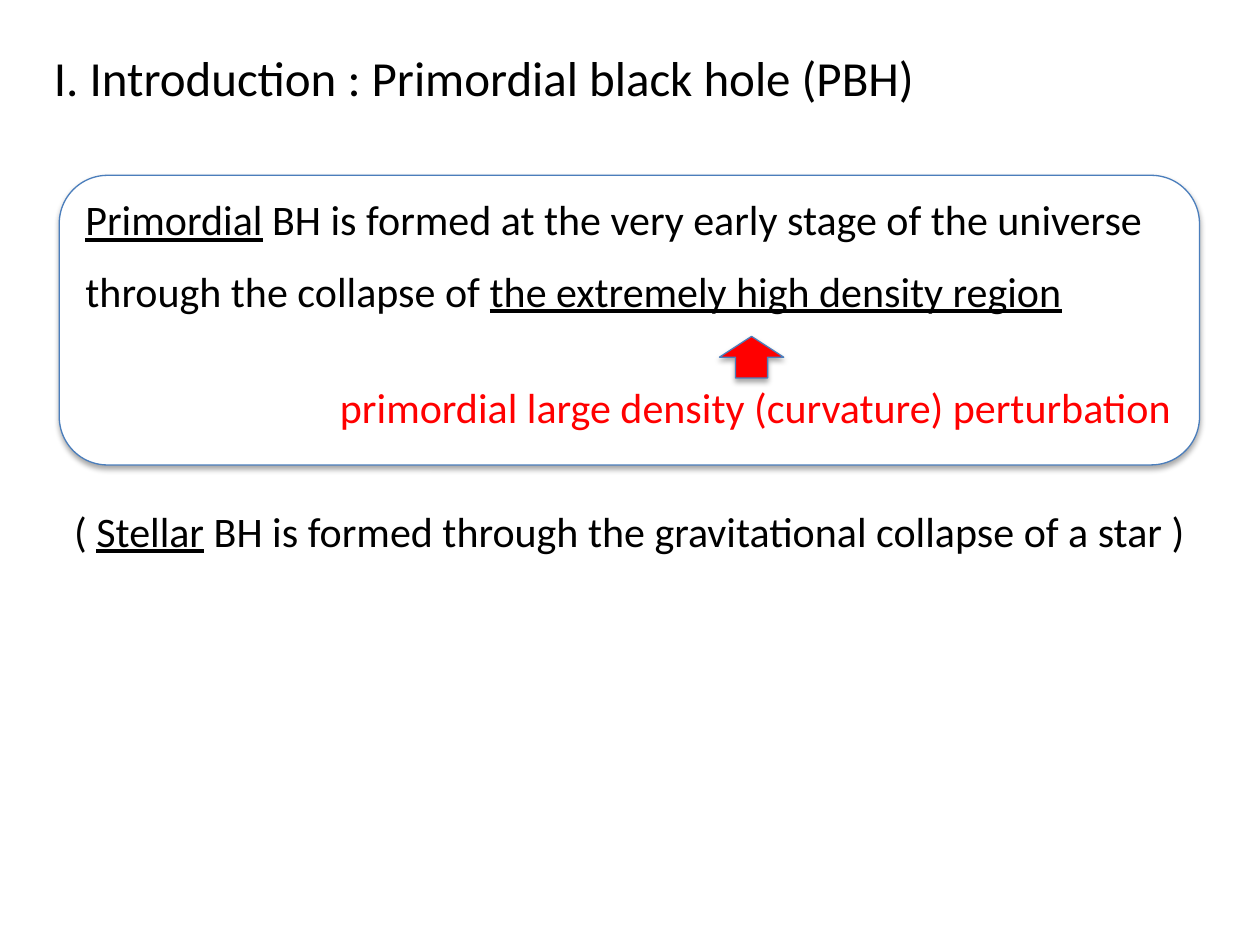
from lxml import etree
from pptx import Presentation
from pptx.dml.color import RGBColor
from pptx.enum.shapes import MSO_SHAPE
from pptx.enum.text import MSO_AUTO_SIZE
from pptx.oxml.ns import qn
from pptx.util import Inches, Pt

ROUND_BOX = MSO_SHAPE.ROUNDED_RECTANGLE
UP_ARROW = MSO_SHAPE.UP_ARROW
FIT_SHAPE = MSO_AUTO_SIZE.SHAPE_TO_FIT_TEXT

WIDTH, HEIGHT = Inches(10), Inches(7.5)
FONT = "Calibri"
BLACK, WHITE, RED, BLUE = "000000", "FFFFFF", "FF0000", "4B7EBC"


def color(value):
    return RGBColor.from_string(value)


def place(x, y, w, h):
    """Turn percentages of the slide into left, top, width and height."""
    return [int(share * size / 100)
            for share, size in zip((x, y, w, h), (WIDTH, HEIGHT) * 2)]


def add_shadow(sp):
    """Give the shape a soft black shadow falling straight down."""
    sp.shadow.inherit = False
    effects = sp._element.spPr.find(qn("a:effectLst"))
    shadow = etree.SubElement(effects, qn("a:outerShdw"), blurRad=str(Pt(3.1)),
                              dist=str(Pt(1.8)), dir="5400000", rotWithShape="0")
    black = etree.SubElement(shadow, qn("a:srgbClr"), val=BLACK)
    etree.SubElement(black, qn("a:alpha"), val="35000")


def add_outlined_shape(shapes, kind, area, fill):
    sp = shapes.add_shape(kind, *place(*area))
    sp.fill.solid()
    sp.fill.fore_color.rgb = color(fill)
    sp.line.color.rgb = color(BLUE)
    sp.line.width = Pt(0.75)
    add_shadow(sp)


def add_text(shapes, area, lines, size=24, ink=BLACK, gap=0):
    """Write lines, each a list of (text, underlined) runs."""
    tf = shapes.add_textbox(*place(*area)).text_frame
    tf.word_wrap = False
    tf.auto_size = FIT_SHAPE
    for i, runs in enumerate(lines):
        p = tf.add_paragraph() if i else tf.paragraphs[0]
        p.space_after = Pt(gap)
        p.font.name = FONT
        p.font.size = Pt(size)
        p.font.color.rgb = color(ink)
        for text, underlined in runs:
            r = p.add_run()
            r.text = text
            if underlined:
                r.font.underline = True


def add_definition(shapes):
    add_outlined_shape(shapes, ROUND_BOX, (4.7, 18.55, 90.5, 30.65), WHITE)
    add_text(shapes, (5.8, 19.85, 86.7, 14.4), [
        [("Primordial", True),
         (" BH is formed at the very early stage of the universe", False)],
        [("through the collapse of ", False),
         ("the extremely high density region", True)],
    ], gap=12)
    add_text(shapes, (26, 39.75, 68.7, 6.7),
             [[("primordial large density (curvature) perturbation", False)]],
             ink=RED)
    add_outlined_shape(shapes, UP_ARROW, (57.1, 35.6, 5.1, 4.4), RED)


def main():
    prs = Presentation()
    prs.slide_width, prs.slide_height = WIDTH, HEIGHT
    s = prs.slides.add_slide(prs.slide_layouts[6])
    add_text(s.shapes, (3.3, 4.4, 71, 7.6),
             [[("I. Introduction : Primordial black hole (PBH)", False)]], size=28)
    add_definition(s.shapes.add_group_shape().shapes)
    add_text(s.shapes, (4.9, 52.8, 90.2, 6.7), [
        [("( ", False), ("Stellar", True),
         (" BH is formed through the gravitational collapse of a star )", False)],
    ])
    prs.save("out.pptx")


if __name__ == "__main__":
    main()
